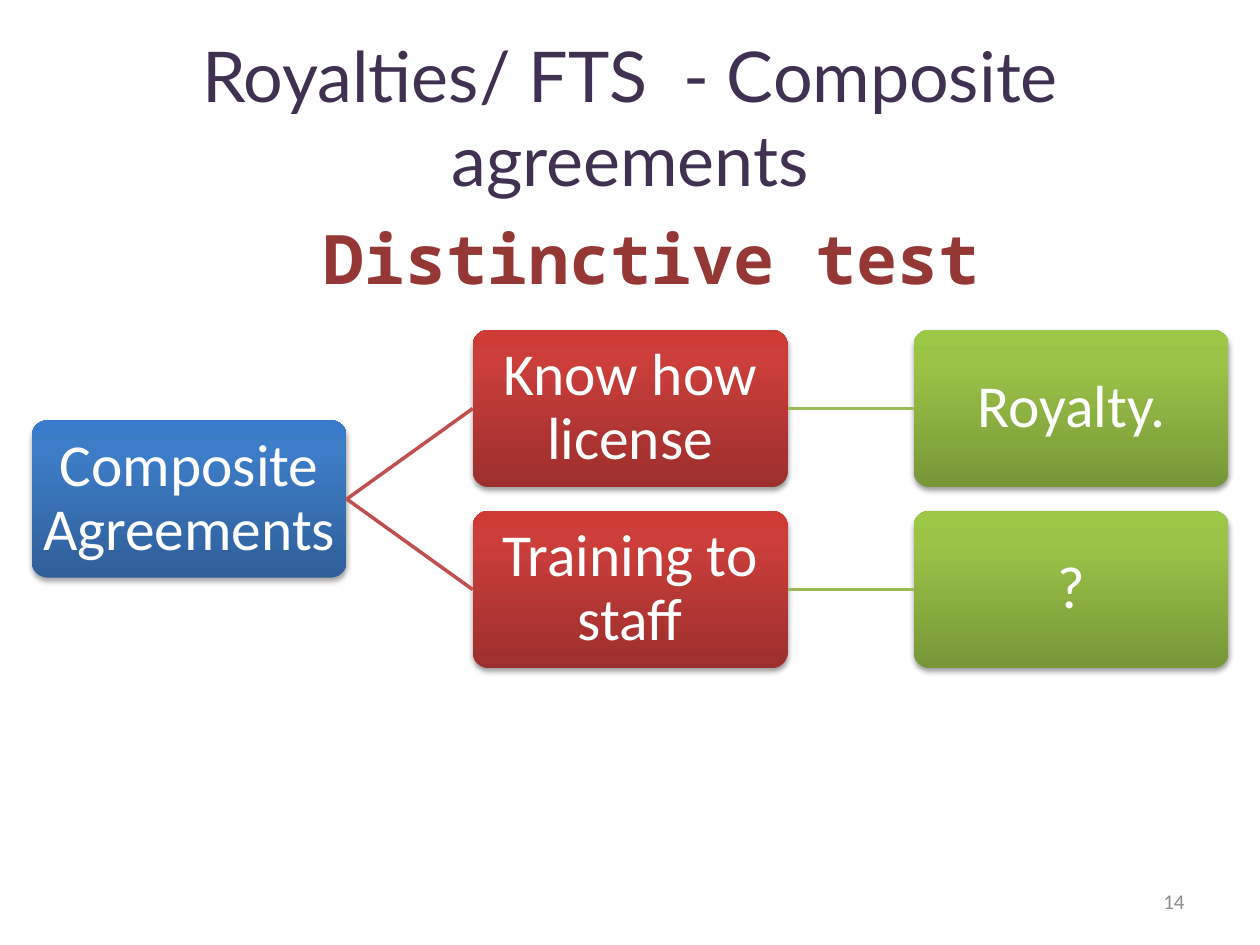
"""Build the composite agreements slide with its three-level decision tree."""
from pptx import Presentation, oxml, util as u
from pptx.dml.color import RGBColor
from pptx.enum import shapes, text
from pptx.oxml.ns import nsdecls

THEME = {
    "title": {"font": "Lato", "size": 40, "color": "403152"},
    "subtitle": {"font": "Noto Sans Mono", "size": 39, "color": "953735", "bold": True},
    "box": {"font": "Calibri", "size": 34, "color": "FFFFFF", "spacing": 0.9, "inset": 0.05},
    "number": {"font": "Calibri", "size": 12, "color": "8C8C8C", "align": text.PP_ALIGN.RIGHT},
    "levels": [
        {"gradient": ("2F5F99", "3D7CC7", "3A7CCB"), "shadow": (35, 1.8)},
        {"gradient": ("9C2F2D", "CB3E3A", "CE3B37"), "shadow": (38, 1.6), "line": "C0504D"},
        {"gradient": ("779737", "9BC348", "9DC746"), "shadow": (38, 1.6), "line": "9BBB59"},
    ],
}
TITLE = ("Royalties/ FTS  - Composite agreements", (1.27, 0.76, 22.86, 3.18))
SUBTITLE = ("Distinctive test", (1.7, 3.6, 22.86, 3.18))
NUMBER = ("14", (18.2, 17.65, 5.93, 1.02))
ROOT = "Composite Agreements"
BRANCHES = [("Know how license", "Royalty."), ("Training to staff", "?")]

LEFT, TOP = 0.64, 6.65
BOX_WIDTH, BOX_HEIGHT = 6.35, 3.17
COLUMN_STEP, ROW_STEP = 8.89, 3.65
STOPS = (0, 80, 100)
RIGHT_SIDE, LEFT_SIDE = 3, 1


def write(shape, content, font, size, color, bold=False, align=text.PP_ALIGN.CENTER,
          spacing=None, inset=None):
    frame = shape.text_frame
    frame.word_wrap = True
    frame.auto_size = text.MSO_AUTO_SIZE.NONE
    frame.vertical_anchor = text.MSO_ANCHOR.MIDDLE
    if inset is not None:
        frame.margin_left = frame.margin_right = u.Cm(inset)
        frame.margin_top = frame.margin_bottom = u.Cm(inset)
    paragraph = frame.paragraphs[0]
    paragraph.alignment = align
    paragraph.line_spacing = spacing
    run = paragraph.add_run()
    run.text = content
    run.font.name, run.font.size, run.font.bold = font, u.Pt(size), bold
    run.font.color.rgb = RGBColor.from_string(color)


def place(shape, bounds):
    shape.left, shape.top, shape.width, shape.height = map(u.Cm, bounds)


def add_label(slide, content, bounds, style):
    write(slide.shapes.add_textbox(*map(u.Cm, bounds)), content, **style)


def add_box(slide, content, level, row):
    bounds = (LEFT + level * COLUMN_STEP, TOP + row * ROW_STEP, BOX_WIDTH, BOX_HEIGHT)
    box = slide.shapes.add_shape(shapes.MSO_SHAPE.ROUNDED_RECTANGLE, *map(u.Cm, bounds))
    box.adjustments[0] = 0.1
    box.line.fill.background()
    style = THEME["levels"][level]
    stops = "".join(
        f'<a:gs pos="{stop * 1000}"><a:srgbClr val="{color}"/></a:gs>'
        for stop, color in zip(STOPS, style["gradient"]))
    opacity, distance = style["shadow"]
    properties = box._element.spPr
    properties.prstGeom.addnext(oxml.parse_xml(
        f'<a:gradFill {nsdecls("a")} rotWithShape="1"><a:gsLst>{stops}</a:gsLst>'
        '<a:lin ang="16200000" scaled="0"/></a:gradFill>'))
    properties.append(oxml.parse_xml(
        f'<a:effectLst {nsdecls("a")}><a:outerShdw blurRad="{u.Pt(3.1)}" '
        f'dist="{u.Pt(distance)}" dir="5400000" rotWithShape="0"><a:srgbClr val="000000">'
        f'<a:alpha val="{opacity * 1000}"/></a:srgbClr></a:outerShdw></a:effectLst>'))
    write(box, content, **THEME["box"])
    return box


def join(slide, parent, child, level):
    connector = slide.shapes.add_connector(shapes.MSO_CONNECTOR.STRAIGHT, 0, 0, 0, 0)
    connector.begin_connect(parent, RIGHT_SIDE)
    connector.end_connect(child, LEFT_SIDE)
    connector.line.width = u.Pt(2)
    connector.line.color.rgb = RGBColor.from_string(THEME["levels"][level]["line"])
    connector._element.spPr.append(oxml.parse_xml(f'<a:effectLst {nsdecls("a")}/>'))


def main():
    presentation = Presentation()
    presentation.slide_width, presentation.slide_height = u.Cm(25.4), u.Cm(19.05)
    slide = presentation.slides.add_slide(presentation.slide_layouts[5])
    title, bounds = TITLE
    place(slide.shapes.title, bounds)
    write(slide.shapes.title, title, **THEME["title"])

    root = add_box(slide, ROOT, 0, (len(BRANCHES) - 1) / 2)
    for row, branch in enumerate(BRANCHES):
        parent = root
        for level, content in enumerate(branch, start=1):
            child = add_box(slide, content, level, row)
            join(slide, parent, child, level)
            parent = child

    add_label(slide, *SUBTITLE, THEME["subtitle"])
    add_label(slide, *NUMBER, THEME["number"])
    presentation.save("out.pptx")


if __name__ == "__main__":
    main()
